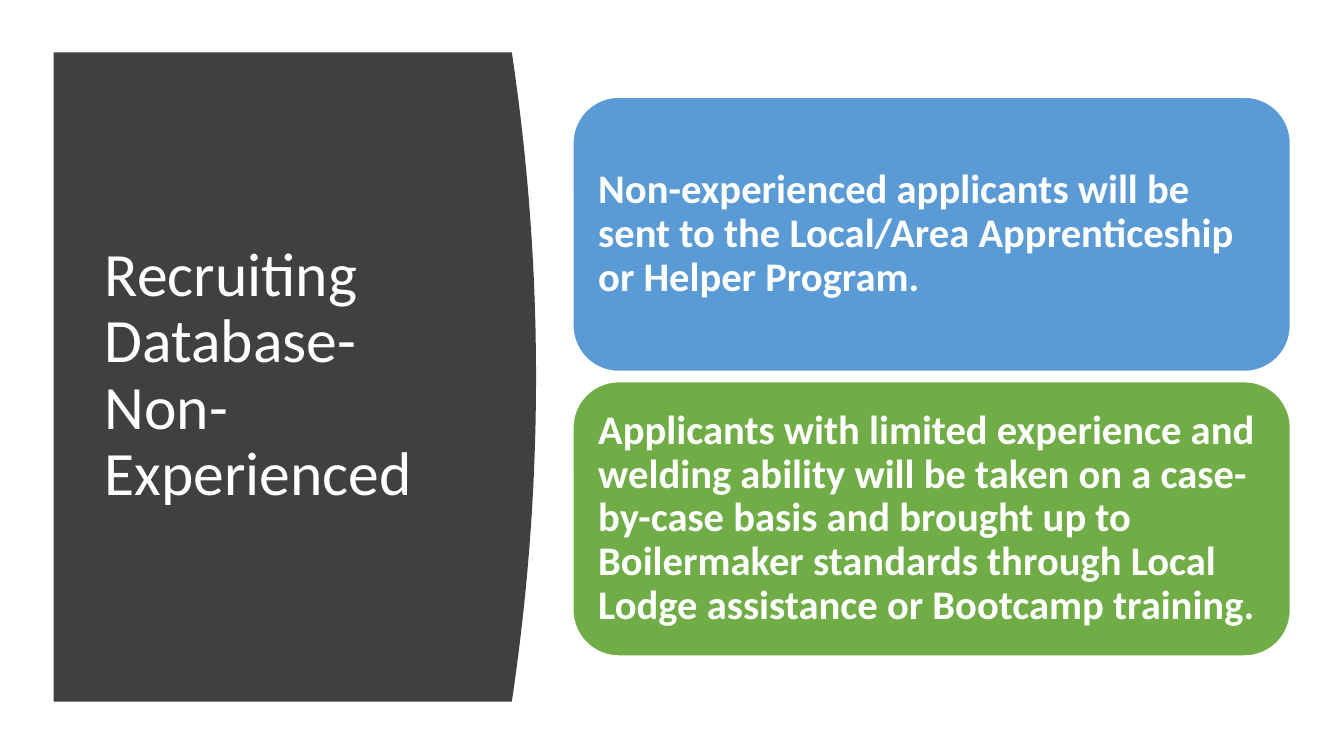
from pptx import Presentation
from pptx.dml.color import RGBColor
from pptx.enum.shapes import MSO_SHAPE as Preset
from pptx.enum.text import MSO_ANCHOR as Anchor, PP_ALIGN as Align
from pptx.util import Cm, Pt


def color(hex_code):
    return RGBColor.from_string(hex_code)


class SlideBuilder:
    """Holds the text style and the current slide, and adds elements to it."""

    font = "Calibri"
    ink = "FFFFFF"
    line_spacing = 0.9

    def __init__(self, slide):
        self.slide = slide

    def paint(self, shape, fill, outline=None):
        shape.shadow.inherit = False
        shape.fill.solid()
        shape.fill.fore_color.rgb = color(fill)
        if outline:
            shape.line.color.rgb = color(outline)
            shape.line.width = Pt(1)
        else:
            shape.line.fill.background()

    def set_wording(self, frame, wording, size, bold=False):
        frame.word_wrap = True
        frame.vertical_anchor = Anchor.MIDDLE
        frame.text = wording
        paragraph = frame.paragraphs[0]
        paragraph.alignment = Align.LEFT
        paragraph.line_spacing = self.line_spacing
        font = paragraph.runs[0].font
        font.name, font.size, font.bold = self.font, Pt(size), bold
        font.color.rgb = color(self.ink)

    def curved_panel(self, left, top, width, height, bulge, fill, steps=40):
        edge = []
        for step in range(steps + 1):
            t = 2 * step / steps - 1
            edge.append((Cm(left + width + bulge * (1 - t * t)),
                         Cm(top + height * step / steps)))
        outline = self.slide.shapes.build_freeform(Cm(left), Cm(top), scale=1.0)
        outline.add_line_segments(edge + [(Cm(left), Cm(top + height))], close=True)
        self.paint(outline.convert_to_shape(), fill)

    def title(self, wording, left, top, width, height, size):
        heading = self.slide.shapes.add_textbox(Cm(left), Cm(top), Cm(width), Cm(height))
        self.set_wording(heading.text_frame, wording, size)

    def card(self, wording, left, top, width, height, fill, size):
        card = self.slide.shapes.add_shape(
            Preset.ROUNDED_RECTANGLE, Cm(left), Cm(top), Cm(width), Cm(height))
        self.paint(card, fill, outline="FFFFFF")
        frame = card.text_frame
        frame.margin_left = frame.margin_right = Cm(0.3)
        frame.margin_top = frame.margin_bottom = Cm(0.3)
        self.set_wording(frame, wording, size, bold=True)


def main():
    deck = Presentation()
    deck.slide_width, deck.slide_height = Cm(33.87), Cm(19.05)
    builder = SlideBuilder(deck.slides.add_slide(deck.slide_layouts[6]))

    builder.curved_panel(1.35, 1.32, 11.55, 16.36, bulge=0.61, fill="404040")
    builder.title("Recruiting Database-Non-Experienced", 2.39, 2.82, 9.5, 13.31, size=44)

    policies = [
        ("Non-experienced applicants will be sent to the Local/Area "
         "Apprenticeship or Helper Program.", "5B9BD5"),
        ("Applicants with limited experience and welding ability will be taken "
         "on a case-by-case basis and brought up to Boilermaker standards "
         "through Local Lodge assistance or Bootcamp training.", "70AD47"),
    ]
    card_height, gap = 6.91, 0.26
    for row, (policy, fill) in enumerate(policies):
        builder.card(policy, 14.44, 2.45 + row * (card_height + gap),
                     18.08, card_height, fill, size=29)

    deck.save("out.pptx")


if __name__ == "__main__":
    main()
